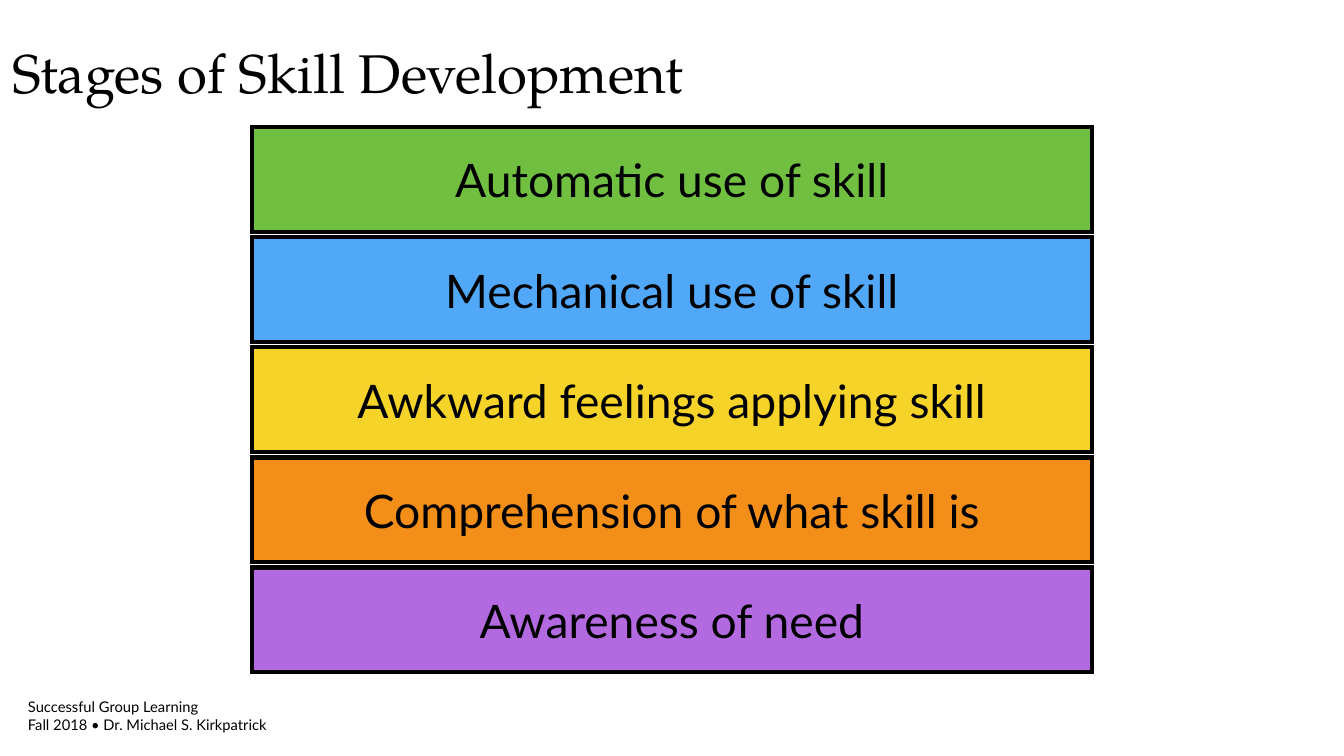
"""Build the slide on the stages of skill development."""
from lxml.etree import SubElement
from pptx import Presentation
from pptx.dml.color import RGBColor
from pptx.enum.shapes import MSO_SHAPE
from pptx.enum.text import MSO_ANCHOR, MSO_AUTO_SIZE, PP_ALIGN
from pptx.oxml.ns import qn
from pptx.util import Cm, Pt

TITLE = "Stages of Skill Development"
STAGES = [
    ("Automatic use of skill", "70BF41"),
    ("Mechanical use of skill", "51A8F9"),
    ("Awkward feelings applying skill", "F5D328"),
    ("Comprehension of what skill is", "F38F18"),
    ("Awareness of need", "B36AE1"),
]
FOOTER = ["Successful Group Learning", "Fall 2018 • Dr. Michael S. Kirkpatrick"]

BLACK = "000000"
BAR_LEFT, BAR_TOP, BAR_WIDTH, BAR_HEIGHT, BAR_PITCH = 8.47, 4.27, 28.22, 3.52, 3.7


def color(value):
    return RGBColor.from_string(value)


def write(sp, lines, size, font, align=PP_ALIGN.LEFT):
    tf = sp.text_frame
    tf.word_wrap = True
    tf.auto_size = MSO_AUTO_SIZE.NONE
    tf.vertical_anchor = MSO_ANCHOR.MIDDLE
    tf.margin_left = tf.margin_right = tf.margin_top = tf.margin_bottom = Cm(0.1)
    for i, line in enumerate(lines):
        p = tf.add_paragraph() if i else tf.paragraphs[0]
        p.alignment = align
        r = p.add_run()
        r.text = line
        r.font.size = Pt(size)
        r.font.name = font
        r.font.color.rgb = color(BLACK)


def add_stage(s, row, label, fill):
    sp = s.shapes.add_shape(MSO_SHAPE.RECTANGLE, Cm(BAR_LEFT), Cm(BAR_TOP + row * BAR_PITCH),
                            Cm(BAR_WIDTH), Cm(BAR_HEIGHT))
    sp.shadow.inherit = False
    sp.fill.solid()
    sp.fill.fore_color.rgb = color(fill)
    sp.line.color.rgb = color(BLACK)
    sp.line.width = Pt(4)
    SubElement(sp.line._get_or_add_ln(), qn("a:miter"), lim="400000")
    write(sp, [label], 44, "Lato", PP_ALIGN.CENTER)


def main():
    prs = Presentation()
    prs.slide_width, prs.slide_height = Cm(45.16), Cm(25.4)
    s = prs.slides.add_slide(prs.slide_layouts[5])

    title = s.shapes.title
    title.left, title.top, title.width, title.height = Cm(0.32), Cm(1.02), Cm(28.73), Cm(2.79)
    write(title, [TITLE], 52, "TeX Gyre Pagella")

    for row, (label, fill) in enumerate(STAGES):
        add_stage(s, row, label, fill)

    footer = s.shapes.add_textbox(Cm(0.84), Cm(23.29), Cm(8.6), Cm(1.52))
    write(footer, FOOTER, 14, "Lato")

    prs.save("out.pptx")


if __name__ == "__main__":
    main()
